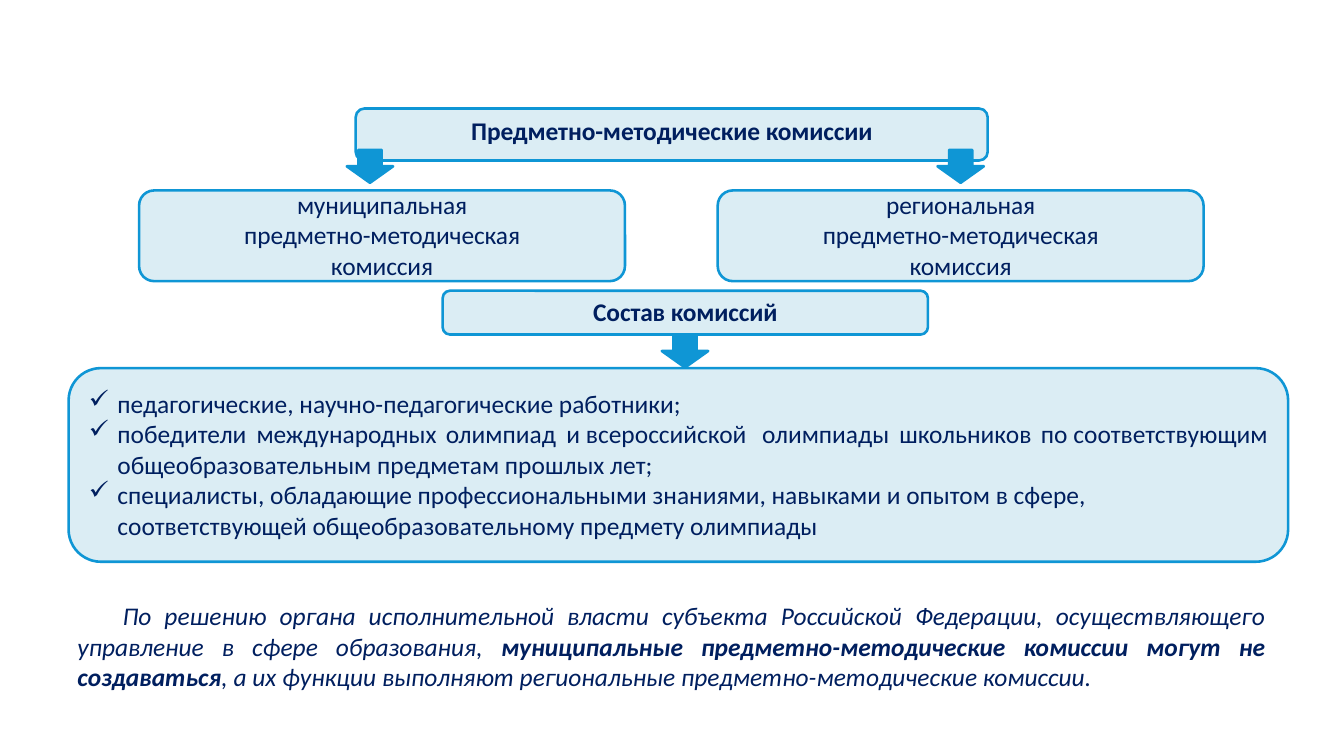
from lxml.etree import SubElement
from pptx import Presentation
from pptx.dml.color import RGBColor
from pptx.enum.shapes import MSO_SHAPE
from pptx.enum.text import MSO_ANCHOR, PP_ALIGN
from pptx.oxml.ns import qn
from pptx.util import Pt

PX = 6350  # 144 px to the inch
COLORS = {"fill": "DBEDF4", "line": "0F96D5", "text": "001F5F"}
LINE_PT = 2.04
ARROW_W, ARROW_H = 73, 52
TAB_STOPS = [62, 281, 579, 769, 1077, 1293, 1516]

TITLE = "Предметно-методические комиссии"
COMMISSIONS = ["муниципальная", "региональная"]
MEMBERS = [
    "педагогические, научно-педагогические работники;",
    "победители\tмеждународных\tолимпиад\tи всероссийской\tолимпиады\t"
    "школьников\tпо соответствующим общеобразовательным предметам прошлых лет;",
    "специалисты, обладающие профессиональными знаниями, навыками и опытом "
    "в сфере, соответствующей общеобразовательному предмету олимпиады",
]
NOTE = [
    ("По решению органа исполнительной власти субъекта Российской Федерации, "
     "осуществляющего управление в сфере образования, ", False),
    ("муниципальные предметно-методические комиссии могут не создаваться", True),
    (", а их функции выполняют региональные предметно-методические комиссии.", False),
]


def rgb(name):
    return RGBColor.from_string(COLORS[name])


def set_frame(tf, left=0, right=0, bottom=0, anchor=MSO_ANCHOR.MIDDLE):
    frame = {"word_wrap": True, "vertical_anchor": anchor, "margin_top": 0,
             "margin_bottom": bottom * PX, "margin_left": left * PX,
             "margin_right": right * PX}
    for name, value in frame.items():
        setattr(tf, name, value)


def add_run(p, text, **extra):
    r = p.add_run()
    r.text = text
    for name, value in {"name": "Calibri", "size": Pt(20), **extra}.items():
        setattr(r.font, name, value)
    r.font.color.rgb = rgb("text")
    return r


def add_panel(s, box, kind=MSO_SHAPE.ROUNDED_RECTANGLE, fill="fill"):
    sp = s.shapes.add_shape(kind, *(v * PX for v in box))
    sp.shadow.inherit = False
    sp.fill.solid()
    sp.fill.fore_color.rgb = rgb(fill)
    sp.line.color.rgb = rgb("line")
    sp.line.width = Pt(LINE_PT)
    return sp


def add_label(s, box, lines, inset=0, bottom=3, bold=False):
    tf = add_panel(s, box).text_frame
    set_frame(tf, inset, inset, bottom)
    for i, line in enumerate(lines):
        p = tf.add_paragraph() if i else tf.paragraphs[0]
        p.alignment = PP_ALIGN.CENTER
        r = add_run(p, line, bold=bold)
        r._r.get_or_add_rPr().set("spc", "-10")


def add_arrow(s, center, top):
    box = (center - ARROW_W // 2, top, ARROW_W, ARROW_H)
    add_panel(s, box, MSO_SHAPE.DOWN_ARROW, "line")


def add_check(p):
    pPr = p._p.get_or_add_pPr()
    pPr.set("marL", str(62 * PX))
    pPr.set("indent", str(-45 * PX))
    SubElement(pPr, qn("a:buChar"), char="✓")
    tabs = SubElement(pPr, qn("a:tabLst"))
    for stop in TAB_STOPS:
        SubElement(tabs, qn("a:tab"), pos=str(stop * PX), algn="l")


def commission_tree(s, box):
    x, y, w, h = box
    # Heading
    add_label(s, (x + 341, y, 995, 82), [TITLE], bottom=12, bold=True)
    # Two commissions, one at each side
    child_w, child_h = 765, 143
    for left, name in zip((x, x + w - child_w), COMMISSIONS):
        child = (left, y + h - child_h, child_w, child_h)
        add_label(s, child, [name, "предметно-методическая комиссия"], inset=90)
    # Arrows from the heading
    for center in (363, 1293):
        add_arrow(s, x + center, y + 65)


def member_list(s, box):
    x, y, w, h = box
    # Heading
    add_label(s, (x + 589, y, 764, 69), ["Состав комиссий"], bold=True)
    # Checked list
    list_top = 122
    tf = add_panel(s, (x, y + list_top, w, h - list_top)).text_frame
    set_frame(tf, right=10, bottom=3)
    for i, member in enumerate(MEMBERS):
        p = tf.add_paragraph() if i else tf.paragraphs[0]
        p.alignment = PP_ALIGN.LEFT
        add_check(p)
        add_run(p, member)
    # Arrow from the heading to the list
    add_arrow(s, x + 970, y + 69)


def closing_note(s, box):
    tf = s.shapes.add_textbox(*(v * PX for v in box)).text_frame
    set_frame(tf, anchor=MSO_ANCHOR.TOP)
    p = tf.paragraphs[0]
    p.alignment = PP_ALIGN.JUSTIFY
    p._p.get_or_add_pPr().set("indent", str(71 * PX))
    for text, bold in NOTE:
        add_run(p, text, bold=bold, italic=True)


def main():
    prs = Presentation()
    prs.slide_width, prs.slide_height = 2116 * PX, 1191 * PX
    s = prs.slides.add_slide(prs.slide_layouts[6])
    commission_tree(s, (219, 171, 1676, 272))
    member_list(s, (108, 458, 1920, 427))
    closing_note(s, (122, 946, 1871, 147))
    prs.save("out.pptx")


if __name__ == "__main__":
    main()
